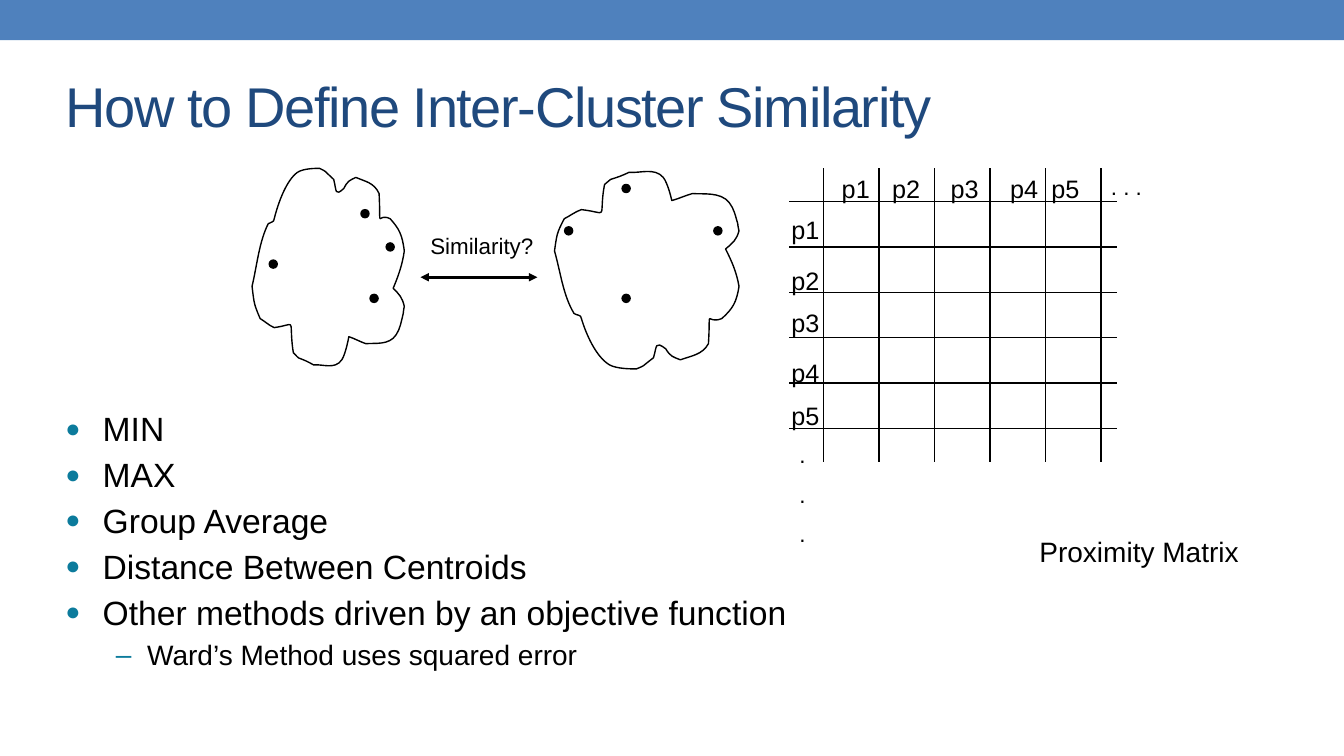
import pptx
import pptx.dml.color
import pptx.enum.shapes
import pptx.enum.text
import pptx.oxml.ns
import pptx.util
from dataclasses import dataclass
from lxml import etree

Inches = pptx.util.Inches
Pt = pptx.util.Pt
color = pptx.dml.color.RGBColor.from_string
qn = pptx.oxml.ns.qn
SHAPES = pptx.enum.shapes.MSO_SHAPE


@dataclass(frozen=True)
class Theme:
    font: str = "Arial"
    band: str = "4F81BD"
    title: str = "1F497D"
    ink: str = "000000"
    bullet: str = "0C7B9C"
    title_size: int = 40
    body_size: int = 24
    sub_size: int = 20
    label_size: int = 18
    small_size: int = 16


theme = Theme()
deck = pptx.Presentation()
deck.slide_width, deck.slide_height = Inches(13.33), Inches(7.5)
page = deck.slides.add_slide(deck.slide_layouts[6])


def add_text(text, left, top, width, height, size, ink=theme.ink):
    box = page.shapes.add_textbox(Inches(left), Inches(top), Inches(width), Inches(height))
    box.text_frame.word_wrap = True
    box.text_frame.text = text
    for para in box.text_frame.paragraphs:
        for span in para.runs:
            span.font.name = theme.font
            span.font.size = Pt(size)
            span.font.color.rgb = color(ink)
    return box


def add_line(x1, y1, x2, y2, width=1):
    line = page.shapes.add_connector(pptx.enum.shapes.MSO_CONNECTOR.STRAIGHT,
                                     Inches(x1), Inches(y1), Inches(x2), Inches(y2))
    line.line.color.rgb = color(theme.ink)
    line.line.width = Pt(width)
    etree.SubElement(line._element.spPr, qn("a:effectLst"))
    return line


# Band and title
band = page.shapes.add_shape(SHAPES.RECTANGLE, 0, 0, deck.slide_width, Inches(0.4))
band.shadow.inherit = False
band.fill.solid()
band.fill.fore_color.rgb = color(theme.band)
band.line.fill.background()

title = add_text("How to Define Inter-Cluster Similarity", 0.55, 0.46, 9.06, 1.17,
                 theme.title_size, theme.title)
title.text_frame.vertical_anchor = pptx.enum.text.MSO_ANCHOR.MIDDLE
title.text_frame.paragraphs[0].runs[0].font._element.set("spc", "-100")

# Proximity matrix
for index in range(6):
    column_x, row_y = 8.17 + 0.55 * index, 2 + 0.45 * index
    add_line(column_x, 1.67, column_x, 4.58)
    add_line(7.83, row_y, 11.08, row_y)

row_tops = [2.08, 2.58, 3, 3.5, 3.92]
column_lefts = [8.25, 8.75, 9.33, 9.92, 10.33]
for number, (top, left) in enumerate(zip(row_tops, column_lefts), start=1):
    add_text(f"p{number}", 7.75, top, 0.58, 0.4, theme.label_size)
    add_text(f"p{number}", left, 1.67, 0.58, 0.4, theme.label_size)

add_text(". . .", 10.92, 1.67, 0.58, 0.37, theme.small_size)
row_dots = add_text(".\n.\n.", 7.83, 4.33, 0.58, 1.17, theme.small_size)
for para in row_dots.text_frame.paragraphs[1:]:
    para.space_before = Pt(9)
add_text("Proximity Matrix", 10.21, 5.25, 2.75, 0.43, theme.sub_size)

# Similarity arrow
arrow = add_line(4.17, 2.75, 5.33, 2.75, 2)
for end in ("a:headEnd", "a:tailEnd"):
    etree.SubElement(arrow.line._get_or_add_ln(), qn(end), type="triangle")
add_text("Similarity?", 4.17, 2.25, 1.58, 0.37, theme.small_size)

# Cluster outline: a start point, then Bézier segments of two controls and an end
outline_start = (2.66, 2.22)
outline_curves = [
    (2.57, 2.4, 2.55, 2.63, 2.5, 2.84), (2.52, 3.01, 2.52, 3.02, 2.58, 3.16),
    (2.63, 3.19, 2.67, 3.23, 2.72, 3.25), (2.94, 3.22, 2.87, 3.15, 2.9, 3.43),
    (2.9, 3.46, 2.91, 3.48, 2.91, 3.5), (2.98, 3.57, 2.94, 3.54, 3.01, 3.57),
    (3.04, 3.58, 3.11, 3.62, 3.11, 3.62), (3.2, 3.61, 3.32, 3.67, 3.39, 3.57),
    (3.43, 3.51, 3.46, 3.34, 3.46, 3.34), (3.52, 3.36, 3.57, 3.39, 3.63, 3.41),
    (3.71, 3.4, 3.86, 3.43, 3.93, 3.32), (3.97, 3.26, 3.98, 3.19, 4, 3.11),
    (4, 3.09, 4.01, 3.04, 4.01, 3.04), (3.99, 2.95, 3.96, 2.92, 3.9, 2.86),
    (3.95, 2.74, 3.99, 2.63, 4.01, 2.49), (3.99, 2.33, 3.96, 2.27, 3.87, 2.17),
    (3.73, 2.1, 3.78, 2.32, 3.76, 1.92), (3.71, 1.81, 3.62, 1.8, 3.53, 1.76),
    (3.47, 1.79, 3.45, 1.79, 3.41, 1.87), (3.32, 1.95, 3.34, 1.9, 3.31, 1.78),
    (3.2, 1.68, 3.25, 1.71, 3.17, 1.67), (3.13, 1.67, 3.01, 1.67, 2.95, 1.71),
    (2.84, 1.79, 2.76, 2.01, 2.72, 2.17), (2.72, 2.21, 2.68, 2.2, 2.66, 2.22),
]
outline = [outline_start]
for curve in outline_curves:
    outline += zip(curve[::2], curve[1::2])

# The right cluster is the left one, stretched sideways and turned upside down
stretch = 1.83 / 1.51
right_outline = [(5.5 + (x - 2.5) * stretch, 5.33 - y) for x, y in outline]
clusters = [
    (outline, [(3.67, 2.92), (3.58, 2.08), (2.67, 2.58), (3.83, 2.41)]),
    (right_outline, [(7.08, 2.25), (5.6, 2.25), (6.17, 2.92), (6.17, 1.83)]),
]
for edge, dots in clusters:
    points = [(Inches(x), Inches(y)) for x, y in edge]
    builder = page.shapes.build_freeform(*points[0])
    builder.add_line_segments(points[3::3], close=True)
    cluster = builder.convert_to_shape()
    cluster.shadow.inherit = False
    cluster.fill.background()
    cluster.line.color.rgb = color(theme.ink)
    cluster.line.width = Pt(1)
    # Each straight segment becomes a curve through its two controls
    segments = list(cluster._element.iter(qn("a:lnTo")))
    for index, segment in enumerate(segments):
        segment.tag = qn("a:cubicBezTo")
        for old_point in list(segment):
            segment.remove(old_point)
        for x, y in points[3 * index + 1:3 * index + 4]:
            etree.SubElement(segment, qn("a:pt"),
                             x=str(x - cluster.left), y=str(y - cluster.top))
    for left, top in dots:
        dot = page.shapes.add_shape(SHAPES.OVAL, Inches(left), Inches(top),
                                    Inches(0.08), Inches(0.08))
        dot.shadow.inherit = False
        dot.fill.solid()
        dot.fill.fore_color.rgb = color(theme.ink)
        dot.line.color.rgb = color(theme.ink)
        dot.line.width = Pt(1)

# Bulleted methods
methods = ["MIN", "MAX", "Group Average", "Distance Between Centroids",
           "Other methods driven by an objective function",
           "Ward’s Method uses squared error"]
body = add_text("\n".join(methods), 0.55, 4, 7.99, 3.42, theme.body_size)
paragraphs = body.text_frame.paragraphs
paragraphs[-1].level = 1
paragraphs[-1].runs[0].font.size = Pt(theme.sub_size)
for para in paragraphs:
    if para.level:
        margin, hanging, mark, percent = 0.81, 0.31, "–", 100
    else:
        margin, hanging, mark, percent = 0.37, 0.37, "●", 75
    para.space_before = para.space_after = Pt(2)
    properties = para._p.get_or_add_pPr()
    properties.set("marL", str(Inches(margin)))
    properties.set("indent", str(-Inches(hanging)))
    bullet_color = etree.SubElement(properties, qn("a:buClr"))
    etree.SubElement(bullet_color, qn("a:srgbClr"), val=theme.bullet)
    etree.SubElement(properties, qn("a:buSzPct"), val=str(percent * 1000))
    etree.SubElement(properties, qn("a:buFont"), typeface=theme.font)
    etree.SubElement(properties, qn("a:buChar"), char=mark)

deck.save("out.pptx")
